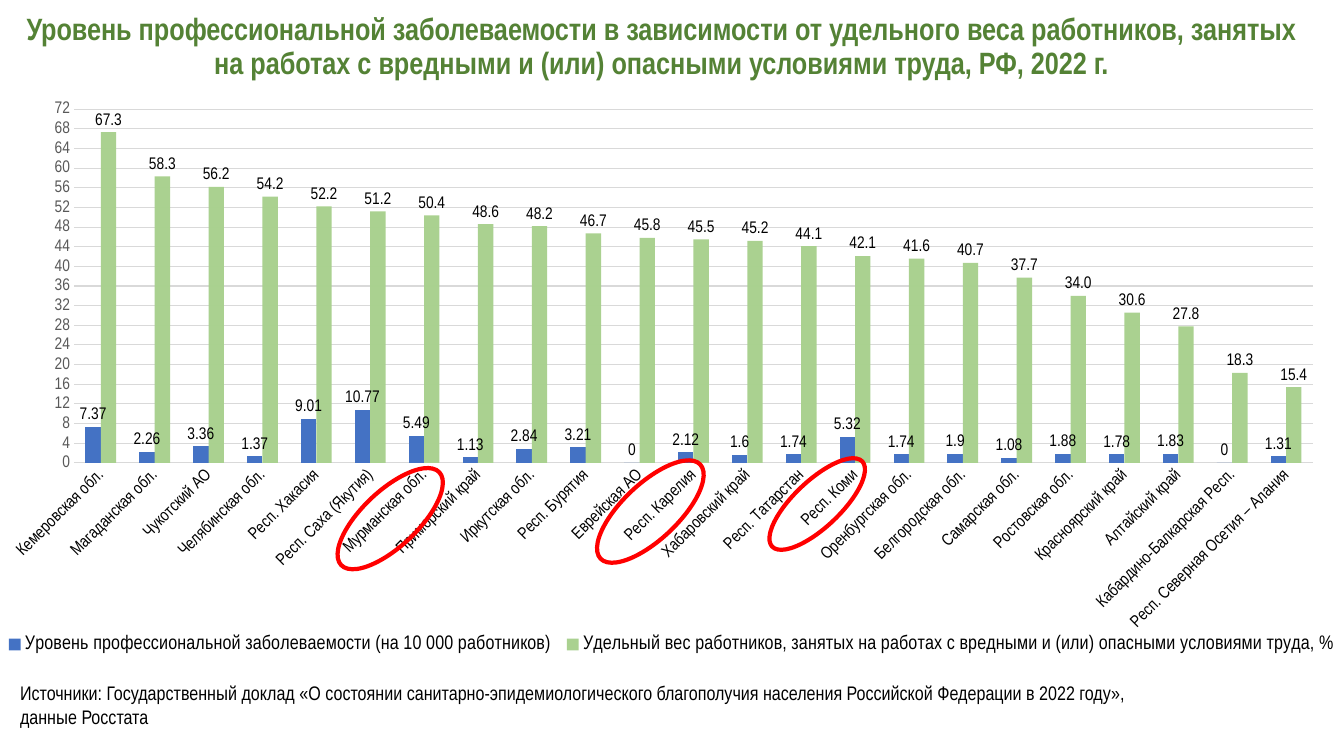
from lxml.etree import SubElement
from pptx import Presentation
from pptx.chart.data import CategoryChartData as ChartData
from pptx.dml.color import RGBColor as RGB
from pptx.enum.chart import XL_CHART_TYPE as ChartType
from pptx.enum.chart import XL_LABEL_POSITION as LabelPos
from pptx.enum.chart import XL_LEGEND_POSITION as LegendPos
from pptx.enum.chart import XL_TICK_MARK as Tick
from pptx.enum.shapes import MSO_SHAPE as Preset
from pptx.enum.text import MSO_ANCHOR as Anchor
from pptx.enum.text import PP_ALIGN as Align
from pptx.oxml import parse_xml
from pptx.oxml.ns import qn
from pptx.util import Inches, Pt

COLORS = {"level": "4472C4", "share": "A9D18E", "title": "548235", "text": "000000",
          "scale": "595959", "grid": "D9D9D9", "mark": "FF0000"}

TITLE = ("Уровень профессиональной заболеваемости в зависимости от удельного веса работников, "
         "занятых на работах с вредными и (или) опасными условиями труда, РФ, 2022 г.")
SOURCES = ["Источники: Государственный доклад «О состоянии санитарно-эпидемиологического "
           "благополучия населения Российской Федерации в 2022 году»,", "данные Росстата"]

REGIONS = [
    ("Кемеровская обл.", 7.37, 67.3), ("Магаданская обл.", 2.26, 58.3),
    ("Чукотский АО", 3.36, 56.2), ("Челябинская обл.", 1.37, 54.2),
    ("Респ. Хакасия", 9.01, 52.2), ("Респ. Саха (Якутия)", 10.77, 51.2),
    ("Мурманская обл.", 5.49, 50.4), ("Приморский край", 1.13, 48.6),
    ("Иркутская обл.", 2.84, 48.2), ("Респ. Бурятия", 3.21, 46.7),
    ("Еврейская АО", 0, 45.8), ("Респ. Карелия", 2.12, 45.5),
    ("Хабаровский край", 1.6, 45.2), ("Респ. Татарстан", 1.74, 44.1),
    ("Респ. Коми", 5.32, 42.1), ("Оренбургская обл.", 1.74, 41.6),
    ("Белгородская обл.", 1.9, 40.7), ("Самарская обл.", 1.08, 37.7),
    ("Ростовская обл.", 1.88, 34), ("Красноярский край", 1.78, 30.6),
    ("Алтайский край", 1.83, 27.8), ("Кабардино-Балкарская Респ.", 0, 18.3),
    ("Респ. Северная Осетия – Алания", 1.31, 15.4),
]
MEASURES = [
    ("Уровень профессиональной заболеваемости (на 10 000 работников)", "level", "General", 100),
    ("Удельный вес работников, занятых на работах с вредными и (или) опасными условиями труда, %",
     "share", "0.0", 98),
]
MARKS = [(5.77, 4.8, 1.36, 0.55), (7.49, 4.77, 1.23, 0.46), (3.2, 4.87, 1.34, 0.55)]


class Slide:
    """Draws styled elements on one slide."""

    face = "Arial Narrow"

    def __init__(self, deck):
        self.shapes = deck.slides.add_slide(deck.slide_layouts[6]).shapes

    def apply(self, target, **values):
        for name, value in values.items():
            setattr(target, name, value)

    def font(self, font, size, color="text", bold=False):
        self.apply(font, name=self.face, size=Pt(size), bold=bold)
        font.color.rgb = RGB.from_string(COLORS[color])

    def text(self, box, lines, size, color="text", bold=False, anchor=Anchor.TOP, **layout):
        frame = self.shapes.add_textbox(*map(Inches, box)).text_frame
        self.apply(frame, word_wrap=True, vertical_anchor=anchor)
        for index, line in enumerate(lines):
            paragraph = frame.add_paragraph() if index else frame.paragraphs[0]
            self.apply(paragraph, **layout)
            run = paragraph.add_run()
            run.text = line
            self.font(run.font, size, color, bold)

    def ring(self, box):
        ring = self.shapes.add_shape(Preset.OVAL, *map(Inches, box))
        ring.rotation = 136.6
        ring.shadow.inherit = False
        ring.fill.background()
        ring.line.color.rgb = RGB.from_string(COLORS["mark"])
        ring.line.width = Pt(3)

    def place(self, part, index, box, inner=False):
        for old in part.findall(qn("c:layout")):
            part.remove(old)
        layout = parse_xml('<c:layout xmlns:c="http://schemas.openxmlformats.org/'
                           'drawingml/2006/chart"><c:manualLayout/></c:layout>')
        settings = [("layoutTarget", "inner")] if inner else []
        settings += [("xMode", "edge"), ("yMode", "edge"), *zip("xywh", box)]
        for name, value in settings:
            SubElement(layout[0], qn(f"c:{name}")).set("val", str(value))
        part.insert(index, layout)

    def axis(self, axis, color):
        self.apply(axis, major_tick_mark=Tick.NONE, minor_tick_mark=Tick.NONE)
        axis.format.line.fill.background()
        self.font(axis.tick_labels.font, 12, color)

    def series(self, series, color, number_format, opacity):
        series.format.fill.solid()
        series.format.fill.fore_color.rgb = RGB.from_string(COLORS[color])
        if opacity < 100:
            tint = next(series._element.iter(qn("a:srgbClr")))
            SubElement(tint, qn("a:alpha")).set("val", str(opacity * 1000))
        labels = series.data_labels
        self.apply(labels, show_value=True, position=LabelPos.OUTSIDE_END,
                   number_format=number_format, number_format_is_linked=False)
        self.font(labels.font, 12)

    def columns(self, box, regions, measures):
        names, *values = zip(*regions)
        data = ChartData()
        data.categories = names
        for measure, numbers in zip(measures, values):
            data.add_series(measure[0], numbers)
        chart = self.shapes.add_chart(ChartType.COLUMN_CLUSTERED, *map(Inches, box), data).chart
        self.apply(chart, has_title=False, has_legend=True)
        self.font(chart.font, 10)

        plot = chart.plots[0]
        self.apply(plot, gap_width=150, overlap=0, vary_by_categories=False)
        for series, measure in zip(plot.series, measures):
            self.series(series, *measure[1:])

        self.axis(chart.category_axis, "text")
        slant = chart.category_axis._element.find(qn("c:txPr")).find(qn("a:bodyPr"))
        slant.set("rot", "-2700000")
        scale = chart.value_axis
        self.axis(scale, "scale")
        self.apply(scale, minimum_scale=0, maximum_scale=75, major_unit=4,
                   has_major_gridlines=True)
        grid = scale.major_gridlines.format.line
        grid.color.rgb = RGB.from_string(COLORS["grid"])
        grid.width = Pt(0.75)

        legend = chart.legend
        self.apply(legend, position=LegendPos.BOTTOM, include_in_layout=False)
        self.font(legend.font, 14)
        self.place(legend._element, 1, (0, 0.83, 1, 0.06))
        self.place(plot._element.getparent(), 0, (0.055, 0.015, 0.922, 0.566), inner=True)


def main():
    deck = Presentation()
    deck.slide_width, deck.slide_height = Inches(13.33), Inches(7.5)
    slide = Slide(deck)
    slide.columns((0, 0.84, 13.33, 6.46), REGIONS, MEASURES)
    slide.text((0.1, 0.04, 12.92, 0.81), [TITLE], 22, "title", True, Anchor.BOTTOM,
               alignment=Align.CENTER, line_spacing=0.9)
    slide.text((0.1, 6.71, 13.05, 0.69), SOURCES, 14)
    for mark in MARKS:
        slide.ring(mark)
    deck.save("out.pptx")


if __name__ == "__main__":
    main()
